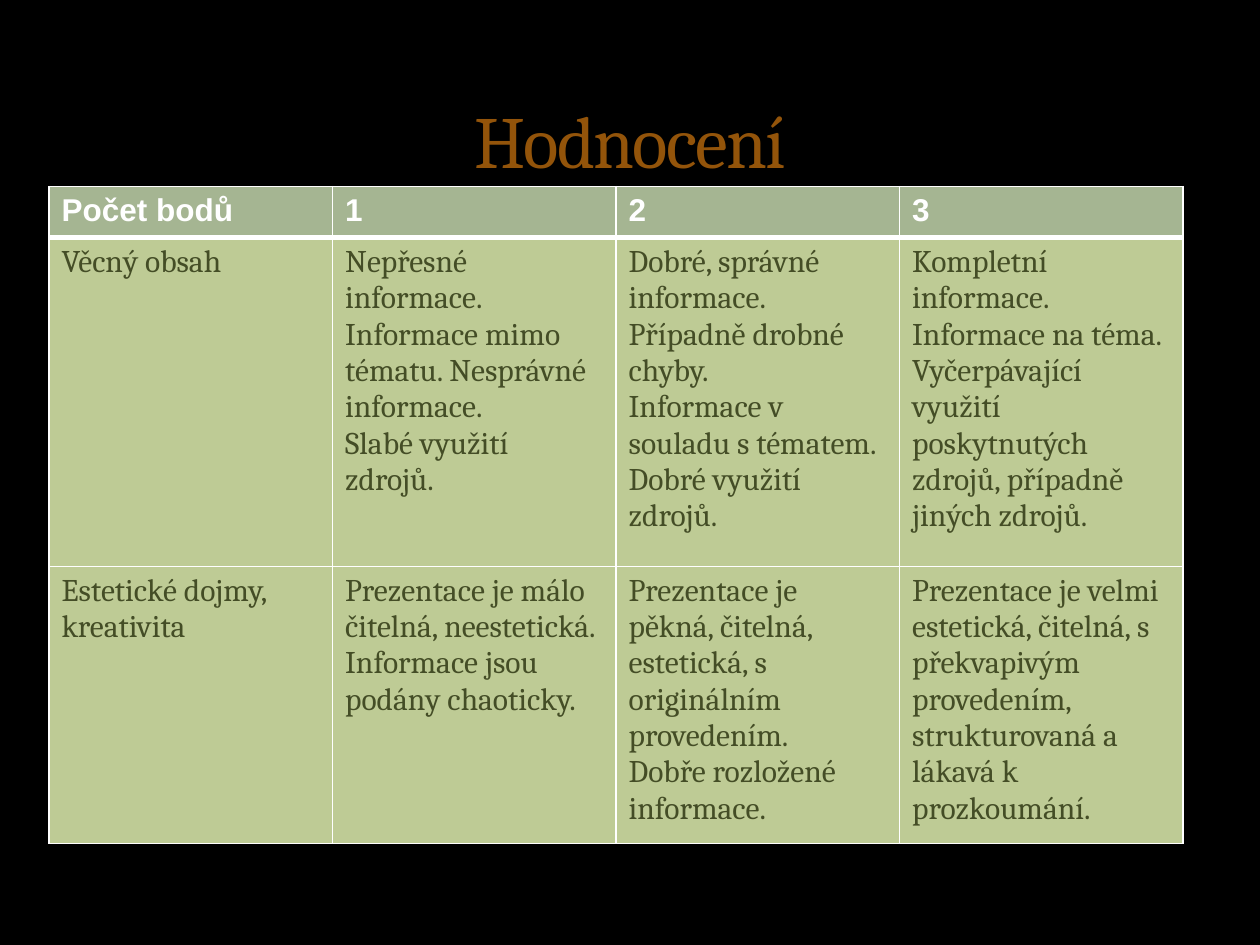
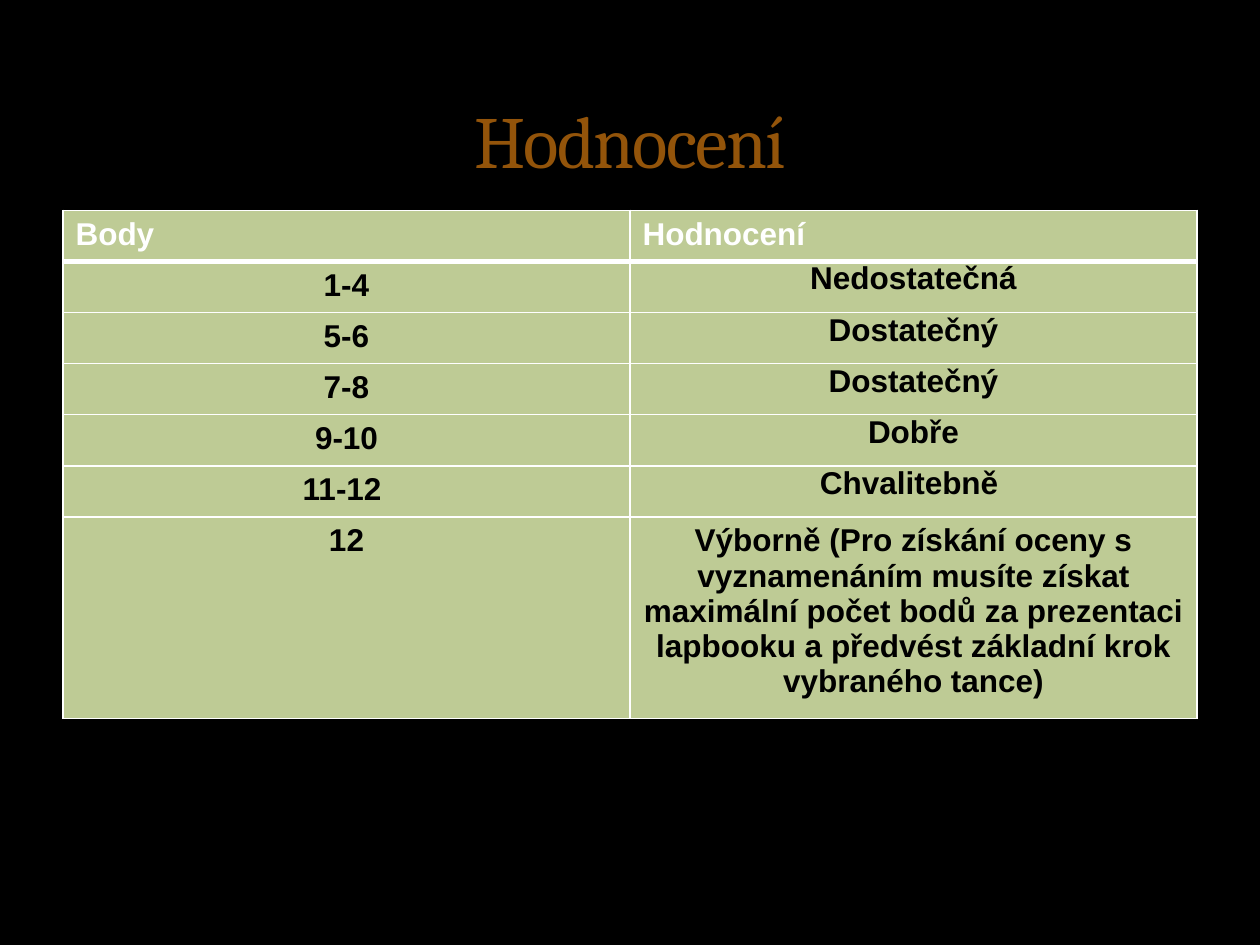
from lxml.etree import SubElement
from pptx import Presentation
from pptx.dml.color import RGBColor
from pptx.enum.text import MSO_ANCHOR as Anchor, PP_ALIGN as Align
from pptx.oxml import parse_xml
from pptx.oxml.ns import qn
from pptx.util import Cm, Pt

BLACK, WHITE = "000000", "FFFFFF"
SAGE, LIME, OLIVE, BROWN = "A5B592", "BECB95", "444D26", "93540A"
OUTLINE = "3C4422"
SANS, SERIF = "Arial", "Cambria"
ROW = 1.03           # height of a one-line row, cm
TABLE_WIDTH = 22.86
TITLE_BOX = (1.27, 0.43, TABLE_WIDTH, 3.38)
THIN, THICK = 1, 3   # border widths, pt

CRITERIA = [
    [["Počet bodů"], ["1"], ["2"], ["3"]],
    [["Věcný obsah"],
     ["Nepřesné informace.", "Informace mimo tématu. Nesprávné informace.",
      "Slabé využití zdrojů."],
     ["Dobré, správné informace. Případně drobné chyby.",
      "Informace v souladu s tématem. Dobré využití zdrojů."],
     ["Kompletní informace.", "Informace na téma.",
      "Vyčerpávající využití poskytnutých zdrojů, případně jiných zdrojů."]],
    [["Estetické dojmy, kreativita"],
     ["Prezentace je málo čitelná, neestetická.", "Informace jsou podány chaoticky."],
     ["Prezentace je pěkná, čitelná, estetická, s originálním provedením.",
      "Dobře rozložené informace."],
     ["Prezentace je velmi estetická, čitelná, s překvapivým provedením, "
      "strukturovaná a lákavá k prozkoumání."]],
]
GRADES = [
    [["Body"], ["Hodnocení"]],
    [["1-4"], ["Nedostatečná"]],
    [["5-6"], ["Dostatečný"]],
    [["7-8"], ["Dostatečný"]],
    [["9-10"], ["Dobře"]],
    [["11-12 "], ["Chvalitebně "]],
    [["12"], ["Výborně (Pro získání oceny s vyznamenáním musíte získat maximální "
              "počet bodů za prezentaci lapbooku a předvést základní krok "
              "vybraného tance)"]],
]


def color(hex_string):
    return RGBColor.from_string(hex_string)


def write(frame, lines, size=18, font=SANS, ink=BLACK, bold=False, align=Align.LEFT):
    """Fill a text frame with one paragraph a line and return the runs."""
    frame.word_wrap = True
    spans = []
    for i, line in enumerate(lines):
        para = frame.add_paragraph() if i else frame.paragraphs[0]
        para.alignment = align
        span = para.add_run()
        span.text = line
        span.font.size, span.font.name, span.font.bold = Pt(size), font, bold
        span.font.color.rgb = color(ink)
        spans.append(span)
    return spans


def add_line(parent, tag, ink, width, alpha=100):
    line = SubElement(parent, qn(tag), w=str(Pt(width)))
    fill = SubElement(SubElement(line, qn("a:solidFill")), qn("a:srgbClr"), val=ink)
    if alpha < 100:
        SubElement(fill, qn("a:alpha"), val=str(alpha * 1000))
    return line


def add_page(deck, title):
    """Black page with the shared centred title."""
    page = deck.slides.add_slide(deck.slide_layouts[6])
    page.background.fill.solid()
    page.background.fill.fore_color.rgb = color(BLACK)
    box = page.shapes.add_textbox(*map(Cm, TITLE_BOX))
    box.text_frame.vertical_anchor = Anchor.BOTTOM
    span, = write(box.text_frame, [title], size=42, font=SERIF, ink=BROWN,
                  align=Align.CENTER)
    # Tight letters with a faint outline
    props = span.font._element
    props.set("spc", "-100")
    props.insert(0, add_line(props, "a:ln", OUTLINE, 0.25, alpha=25))
    return page


def add_grid(page, left, top, heights, rows, header_fill, **body_format):
    """Table of equal columns with a bold header row and white borders."""
    count = len(rows[0])
    box = map(Cm, (left, top, TABLE_WIDTH, sum(heights)))
    table = page.shapes.add_table(len(rows), count, *box).table
    table.horz_banding = False
    for column in table.columns:
        column.width = Cm(TABLE_WIDTH / count)
    for r, (height, texts) in enumerate(zip(heights, rows)):
        table.rows[r].height = Cm(height)
        for c, lines in enumerate(texts):
            cell = table.cell(r, c)
            # Borders come before the fill; the header rule is thick
            props = cell._tc.get_or_add_tcPr()
            widths = {"L": THIN, "R": THIN, "T": THICK if r == 1 else THIN,
                      "B": THICK if r == 0 else THIN}
            for side, width in widths.items():
                add_line(props, "a:ln" + side, WHITE, width)
            cell.fill.solid()
            cell.fill.fore_color.rgb = color(LIME if r else header_fill)
            header_format = dict(ink=WHITE, bold=True)
            write(cell.text_frame, lines, **(body_format if r else header_format))
    return table


def build_criteria(deck):
    page = add_page(deck, "Hodnocení")
    add_grid(page, 0.99, 3.76, [ROW, 6.63, 5.38], CRITERIA, SAGE,
             font=SERIF, ink=OLIVE)


def build_grades(deck):
    page = add_page(deck, "Hodnocení")
    table = add_grid(page, 1.27, 4.24, [ROW] * 6 + [3.81], GRADES, LIME,
                     bold=True, align=Align.CENTER)
    # One-word grades sit at the very top of their cells
    for r in range(1, len(GRADES) - 1):
        cell = table.cell(r, 1)
        cell.margin_top = cell.margin_bottom = 0
        cell.margin_left = cell.margin_right = Cm(0.18)


def main():
    deck = Presentation()
    deck.slide_width, deck.slide_height = Cm(25.4), Cm(19.05)
    build_criteria(deck)
    build_grades(deck)
    deck.save("out.pptx")


if __name__ == "__main__":
    main()
